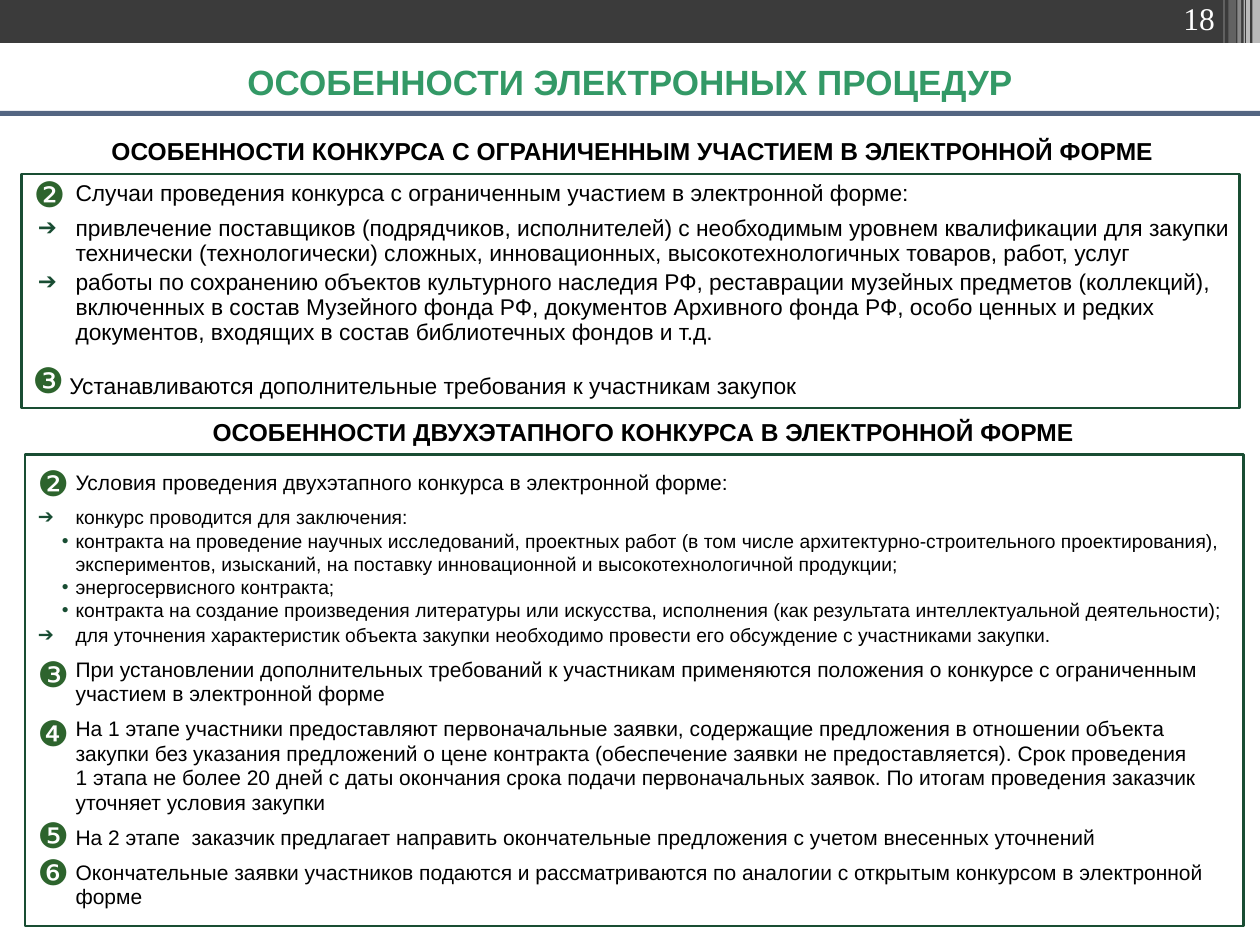
from lxml import etree
from pptx import Presentation
from pptx.dml.color import RGBColor
from pptx.enum.shapes import MSO_SHAPE
from pptx.enum.text import MSO_ANCHOR, MSO_AUTO_SIZE, PP_ALIGN
from pptx.oxml.ns import qn
from pptx.util import Inches, Pt

RECT = MSO_SHAPE.RECTANGLE
LEFT, MID, RIGHT = PP_ALIGN.LEFT, PP_ALIGN.CENTER, PP_ALIGN.RIGHT
TOP, CENTER, BOTTOM = MSO_ANCHOR.TOP, MSO_ANCHOR.MIDDLE, MSO_ANCHOR.BOTTOM
NONE = MSO_AUTO_SIZE.NONE
DARK, LEAF, INK, WHITE = "194D33", "2D642D", "000000", "FFFFFF"
ARROW, DOT = "➔", "•"

TITLE = "ОСОБЕННОСТИ ЭЛЕКТРОННЫХ ПРОЦЕДУР"
BARS = [(9.94, 0.06, 65), (9.89, 0.03, 65), (9.87, 0.01, 60),
        (9.82, 0.03, 40), (9.75, 0.06, 20), (9.71, 0.01, 30)]

STYLES = {
    "lead": dict(size=13, after=6),
    "case": dict(size=13, line=14, after=3, mark=ARROW, first=-0.3),
    "last": dict(size=13, line=14, before=14, left=0.25),
    "terms": dict(size=12, line=15, after=6),
    "goal": dict(size=11, line=13.3, mark=ARROW, first=-0.3),
    "deal": dict(size=11, line=13.3, mark=DOT, first=-0.11),
    "end": dict(size=11, line=14, after=6, mark=ARROW, first=-0.3),
    "step": dict(size=12, line=14, after=6),
}

PARTS = [
    dict(
        head="ОСОБЕННОСТИ КОНКУРСА С ОГРАНИЧЕННЫМ УЧАСТИЕМ В ЭЛЕКТРОННОЙ ФОРМЕ",
        spot=(0.78, 1, 8.48, 0.37),
        frame=(0.17, 1.38, 9.67, 1.86),
        area=(0.2, 1.37, 9.65, 1.82),
        marks=[("❷", 0.17, 1.32), ("❸", 0.16, 2.8)],
        rows=[
            ("lead", "Случаи проведения конкурса с ограниченным участием в электронной форме:"),
            ("case", "привлечение поставщиков (подрядчиков, исполнителей) с необходимым уровнем "
             "квалификации для закупки технически (технологически) сложных, инновационных, "
             "высокотехнологичных товаров, работ, услуг"),
            ("case", "работы по сохранению объектов культурного наследия РФ, реставрации музейных "
             "предметов (коллекций), включенных в состав Музейного фонда РФ, документов Архивного "
             "фонда РФ, особо ценных и редких документов, входящих в состав библиотечных фондов и т.д."),
            ("last", "Устанавливаются дополнительные требования к участникам закупок"),
        ]),
    dict(
        head="ОСОБЕННОСТИ ДВУХЭТАПНОГО КОНКУРСА В ЭЛЕКТРОННОЙ ФОРМЕ",
        spot=(1.56, 3.23, 7.09, 0.35),
        frame=(0.2, 3.61, 9.67, 3.74),
        area=(0.2, 3.67, 9.65, 3.64),
        marks=[("❷", 0.2, 3.61), ("❸", 0.2, 5.13), ("❹", 0.2, 5.6),
               ("❺", 0.2, 6.41), ("❻", 0.2, 6.7)],
        rows=[
            ("terms", "Условия проведения двухэтапного конкурса в электронной форме:"),
            ("goal", "конкурс проводится для заключения:"),
            ("deal", "контракта на проведение научных исследований, проектных работ (в том числе "
             "архитектурно-строительного проектирования), экспериментов, изысканий, на поставку "
             "инновационной и высокотехнологичной продукции;"),
            ("deal", "энергосервисного контракта;"),
            ("deal", "контракта на создание произведения литературы или искусства, исполнения "
             "(как результата интеллектуальной деятельности);"),
            ("end", "для уточнения характеристик объекта закупки необходимо провести его "
             "обсуждение с участниками закупки."),
            ("step", "При установлении дополнительных требований к участникам применяются "
             "положения о конкурсе с ограниченным участием в электронной форме"),
            ("step", "На 1 этапе участники предоставляют первоначальные заявки, содержащие "
             "предложения в отношении объекта закупки без указания предложений о цене контракта "
             "(обеспечение заявки не предоставляется). Срок проведения \v1 этапа не более 20 дней "
             "с даты окончания срока подачи первоначальных заявок. По итогам проведения заказчик "
             "уточняет условия закупки"),
            ("step", "На 2 этапе  заказчик предлагает направить окончательные предложения "
             "с учетом внесенных уточнений"),
            ("step", "Окончательные заявки участников подаются и рассматриваются по аналогии "
             "с открытым конкурсом в электронной форме"),
        ]),
]


def paint(item, color):
    item.rgb = RGBColor.from_string(color)


def place(shape, spot):
    shape.left, shape.top, shape.width, shape.height = map(Inches, spot)


def style(para, size, color=INK, bold=False, face="Arial"):
    font = para.font
    font.name, font.size, font.bold = face, Pt(size), bold
    paint(font.color, color)


def block(spot, fill, line=None, alpha=None):
    shape = shapes.add_shape(RECT, *map(Inches, spot))
    shape.shadow.inherit = False
    shape.fill.solid()
    paint(shape.fill.fore_color, fill)
    if line:
        paint(shape.line.color, line)
        shape.line.width = Pt(1.5)
    else:
        shape.line.fill.background()
    if alpha:
        tint = shape._element.spPr.find(".//" + qn("a:srgbClr"))
        etree.SubElement(tint, qn("a:alpha"), val=str(alpha * 1000))


def label(spot, text, size, color, bold=False, face="Arial",
          align=LEFT, anchor=TOP, space=None):
    frame = shapes.add_textbox(*map(Inches, spot)).text_frame
    frame.word_wrap = align == RIGHT
    frame.vertical_anchor = anchor
    para = frame.paragraphs[0]
    para.text, para.alignment, para.line_spacing = text, align, space
    style(para, size, color, bold, face)


def write(para, text, size, line=None, before=0, after=0, left=0.3, first=0, mark=None):
    para.text = text
    para.space_before, para.space_after = Pt(before), Pt(after)
    para.line_spacing = Pt(line) if line else 1.0
    props = para._p.get_or_add_pPr()
    props.set("marL", str(Inches(left)))
    props.set("indent", str(Inches(first)))
    if mark:
        tint = etree.SubElement(props, qn("a:buClr"))
        etree.SubElement(tint, qn("a:srgbClr"), val=DARK)
        etree.SubElement(props, qn("a:buChar"), char=mark)
    else:
        etree.SubElement(props, qn("a:buNone"))
    style(para, size)


deck = Presentation()
deck.slide_width, deck.slide_height = Inches(10), Inches(7.5)
slide = deck.slides.add_slide(deck.slide_layouts[3])
shapes = slide.shapes
title, *bodies = slide.placeholders

block((0, 0, 10, 0.34), "3B3B3B")
for left, width, alpha in BARS:
    block((left, 0, width, 0.34), WHITE, alpha=alpha)
label((8.12, 0, 1.62, 0.34), "18", 18, WHITE,
      face="Times New Roman", align=RIGHT, anchor=BOTTOM)
block((0, 0.88, 10, 0.04), "546682")

place(title, (0, 0.36, 10, 0.57))
title.text_frame.text = TITLE
title.text_frame.auto_size = NONE
title.text_frame.vertical_anchor = CENTER
title.text_frame.paragraphs[0].alignment = MID
style(title.text_frame.paragraphs[0], 20, "339966", True)

for part, body in zip(PARTS, bodies):
    label(part["spot"], part["head"], 14, INK, True, align=MID, space=1.14)
    block(part["frame"], WHITE, DARK)
    place(body, part["area"])
    shapes._spTree.append(body._element)
    frame = body.text_frame
    frame.auto_size, frame.word_wrap = NONE, True
    for i, (kind, text) in enumerate(part["rows"]):
        para = frame.add_paragraph() if i else frame.paragraphs[0]
        write(para, text, **STYLES[kind])
    for sign, left, top in part["marks"]:
        label((left, top, 0.45, 0.44), sign, 20, LEAF)

deck.save("out.pptx")
